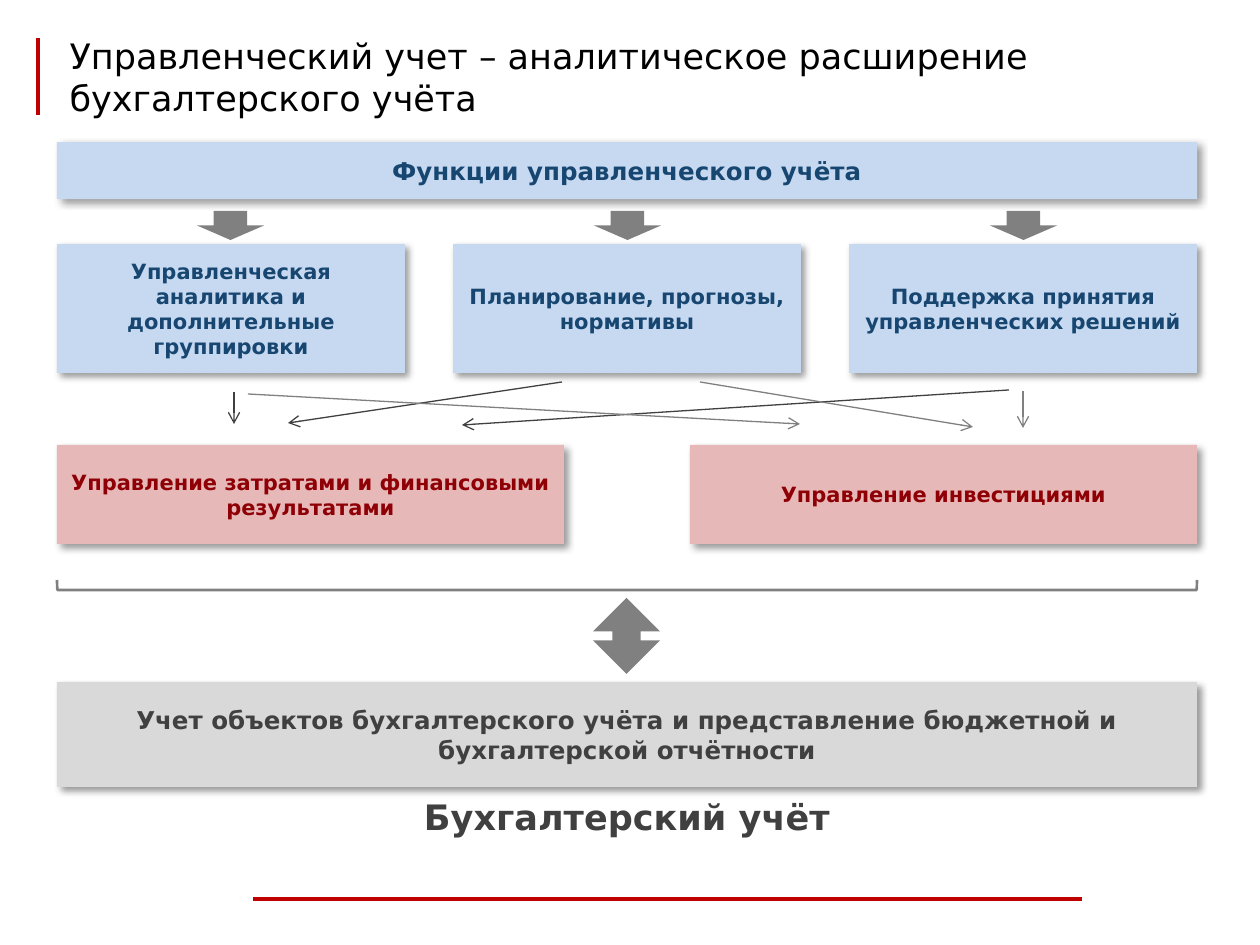
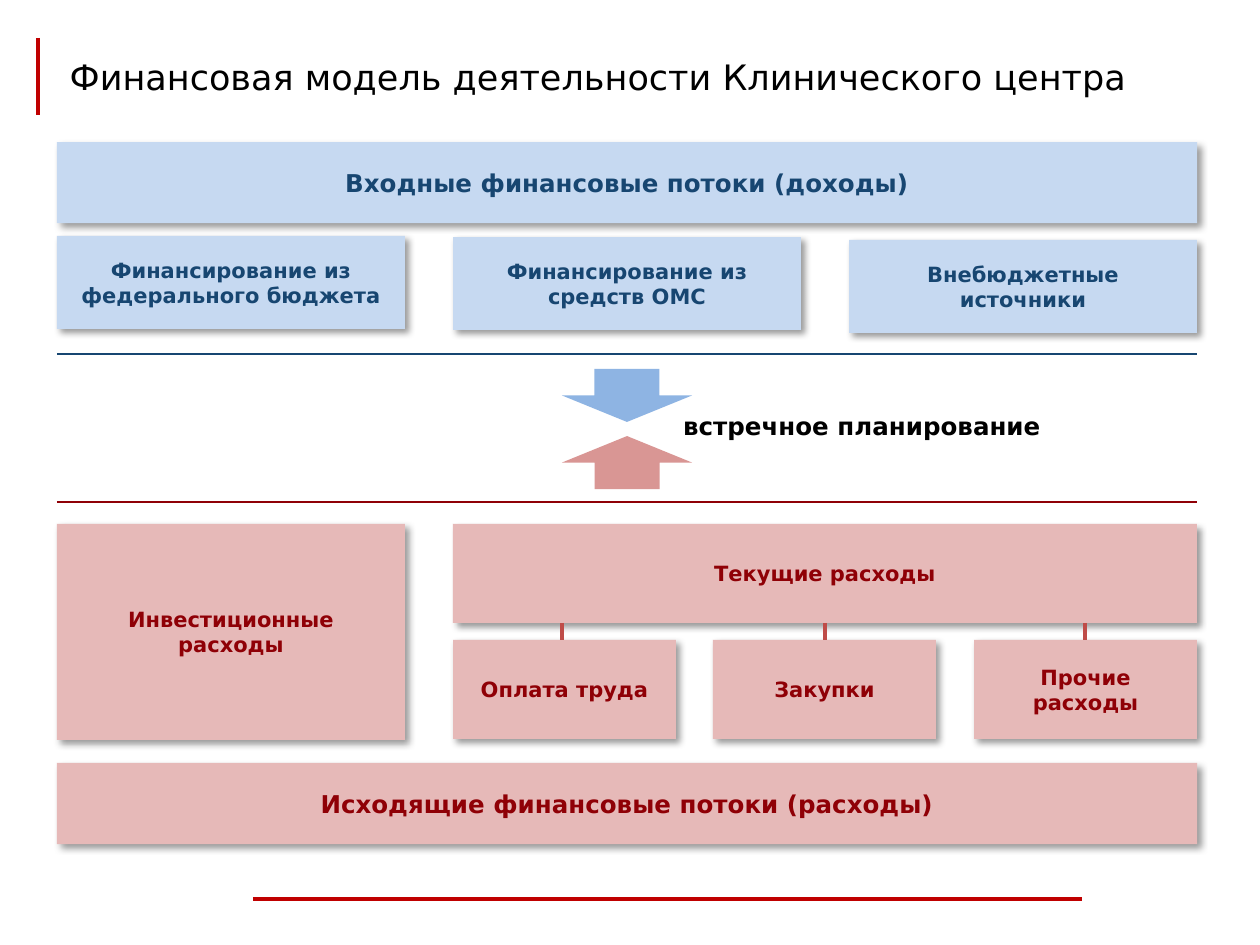
"""Build two slides on management accounting and a centre's financial model."""
from lxml import etree
from pptx import Presentation, util as u
from pptx.dml.color import RGBColor
from pptx.enum import shapes, text
from pptx.oxml import parse_xml
from pptx.oxml.ns import nsdecls, qn

PX = u.Inches(1) / 126
FONT = "DejaVu Sans"
HUES = dict(red="C00000", sky="C6D9F1", navy="174671", rose="E6B9B8", wine="8F0006",
            gray="808080", dark="404040", pale="D9D9D9", black="000000",
            blue="8EB4E3", pink="D99694", brick="BF4C48")
RGB = {name: RGBColor.from_string(code) for name, code in HUES.items()}
LEFT, WIDE = 57, 1140
RIGHT = LEFT + WIDE
THIRD = 348
COLS = [LEFT, 453, RIGHT - THIRD]
KIND = shapes.MSO_SHAPE
SHADE = (f'<a:effectLst {nsdecls("a")}><a:outerShdw blurRad="50800" dist="38100" '
         f'dir="2700000" algn="tl" rotWithShape="0"><a:srgbClr val="{HUES["black"]}">'
         '<a:alpha val="40000"/></a:srgbClr></a:outerShdw></a:effectLst>')


def put(page, at, words="", fill=None, ink=None, size=12, kind=KIND.RECTANGLE, adj=()):
    """Add a shape, with centred bold words and a shadow if it is a filled box."""
    item = page.shapes.add_shape(kind, *[round(n * PX) for n in at])
    item.shadow.inherit = False
    item.line.fill.background()
    if fill:
        item.fill.solid()
        item.fill.fore_color.rgb = RGB[fill]
    else:
        item.fill.background()
    for spot, value in enumerate(adj):
        item.adjustments[spot] = value
    if not words:
        return item
    if fill:
        props = item._element.spPr
        props.remove(props.find(qn("a:effectLst")))
        props.append(parse_xml(SHADE))
    frame = item.text_frame
    frame.word_wrap = True
    frame.vertical_anchor = text.MSO_ANCHOR.MIDDLE
    for row, line in enumerate(words.split("\n")):
        para = frame.add_paragraph() if row else frame.paragraphs[0]
        para.alignment = text.PP_ALIGN.CENTER
        run = para.add_run()
        run.text = line
        run.font.name, run.font.size, run.font.bold = FONT, u.Pt(size), True
        run.font.color.rgb = RGB[ink]
    return item


def link(page, ends, hue, weight, arrow=False):
    """Draw a straight line, with an open arrowhead at its end if asked."""
    line = page.shapes.add_connector(shapes.MSO_CONNECTOR.STRAIGHT,
                                     *[round(n * PX) for n in ends])
    line.line.color.rgb = RGB[hue]
    line.line.width = u.Pt(weight)
    if arrow:
        etree.SubElement(line.line._get_or_add_ln(), qn("a:tailEnd"), type="arrow")
    etree.SubElement(line._element.spPr, qn("a:effectLst"))


deck = Presentation()
deck.slide_width, deck.slide_height = u.Inches(10), u.Inches(7.5)

pages = []
for name in ["Управленческий учет – аналитическое расширение бухгалтерского учёта",
             "Финансовая модель деятельности Клинического центра"]:
    page = deck.slides.add_slide(deck.slide_layouts[5])
    link(page, (253, 899, 1082, 899), "red", 2.25)
    link(page, (38, 38, 38, 115), "red", 2.25)
    title = page.shapes.title
    title.left, title.top, title.width, title.height = [
        round(n * PX) for n in (LEFT, 38, WIDE, 77)]
    frame = title.text_frame
    frame.word_wrap = True
    frame.auto_size = text.MSO_AUTO_SIZE.NONE
    frame.vertical_anchor = text.MSO_ANCHOR.MIDDLE
    para = frame.paragraphs[0]
    para.alignment = text.PP_ALIGN.LEFT
    run = para.add_run()
    run.text = name
    run.font.name, run.font.size = FONT, u.Pt(20)
    run.font.color.rgb = RGB["black"]
    pages.append(page)
roles, model = pages

put(roles, (LEFT, 142, WIDE, 57), "Функции управленческого учёта", "sky", "navy", 14,
    KIND.ROUNDED_RECTANGLE, [0])
for left, mid, words in zip(COLS, [230, 627, 1023], [
        "Управленческая аналитика и дополнительные группировки",
        "Планирование, прогнозы, нормативы",
        "Поддержка принятия управленческих решений"]):
    put(roles, (left, 244, THIRD, 129), words, "sky", "navy")
    put(roles, (mid - 33, 211, 67, 29), fill="gray", kind=KIND.DOWN_ARROW)
for left, words in [(LEFT, "Управление затратами и финансовыми результатами"),
                    (RIGHT - 507, "Управление инвестициями")]:
    put(roles, (left, 445, 507, 99), words, "rose", "wine")
for hue, paths in {
        "dark": [(234, 392, 234, 424), (562, 382, 288, 423), (1009, 390, 462, 425)],
        "gray": [(248, 394, 800, 424), (700, 382, 973, 427), (1023, 391, 1023, 428)]}.items():
    for ends in paths:
        link(roles, ends, hue, 0.75, arrow=True)
put(roles, (LEFT, 682, WIDE, 105),
    "Учет объектов бухгалтерского учёта и представление бюджетной и бухгалтерской отчётности",
    "pale", "dark", 14)
put(roles, (LEFT, 773, WIDE, 87), "Бухгалтерский учёт", ink="dark", size=20)
put(roles, (593, 598, 67, 76), fill="gray", kind=KIND.UP_DOWN_ARROW, adj=[0.5, 0.42])
brace = put(roles, (622, 15, 10, WIDE), kind=KIND.LEFT_BRACKET, adj=[0.06])
brace.rotation = 270
brace.line.color.rgb = RGB["gray"]
brace.line.width = u.Pt(1.5)

for top, words, fill, ink in [(142, "Входные финансовые потоки (доходы)", "sky", "navy"),
                              (763, "Исходящие финансовые потоки (расходы)", "rose", "wine")]:
    put(model, (LEFT, top, WIDE, 81), words, fill, ink, 14, KIND.ROUNDED_RECTANGLE, [0])
for left, top, words in zip(COLS, [236, 237, 240], [
        "Финансирование из федерального бюджета",
        "Финансирование из средств ОМС",
        "Внебюджетные источники"]):
    put(model, (left, top, THIRD, 93), words, "sky", "navy")
put(model, (LEFT, 524, THIRD, 216), "Инвестиционные\nрасходы", "rose", "wine")
put(model, (COLS[1], 524, RIGHT - COLS[1], 99), "Текущие расходы", "rose", "wine")
for spot, (mid, words) in enumerate([(562, "Оплата труда"), (825, "Закупки"),
                                     (1085, "Прочие расходы")]):
    put(model, (COLS[1] + spot * 521 // 2, 640, 223, 99), words, "rose", "wine")
    link(model, (mid, 623, mid, 640), "brick", 2.25)
for top, hue, turn in [(369, "blue", 0), (436, "pink", 180)]:
    put(model, (562, top, 130, 53), fill=hue, kind=KIND.DOWN_ARROW).rotation = turn
for high, hue in [(354, "navy"), (502, "wine")]:
    link(model, (LEFT, high, RIGHT, high), hue, 1.5)
put(model, (639, 402, 446, 47), "встречное планирование", ink="black", size=14)

deck.save("out.pptx")
